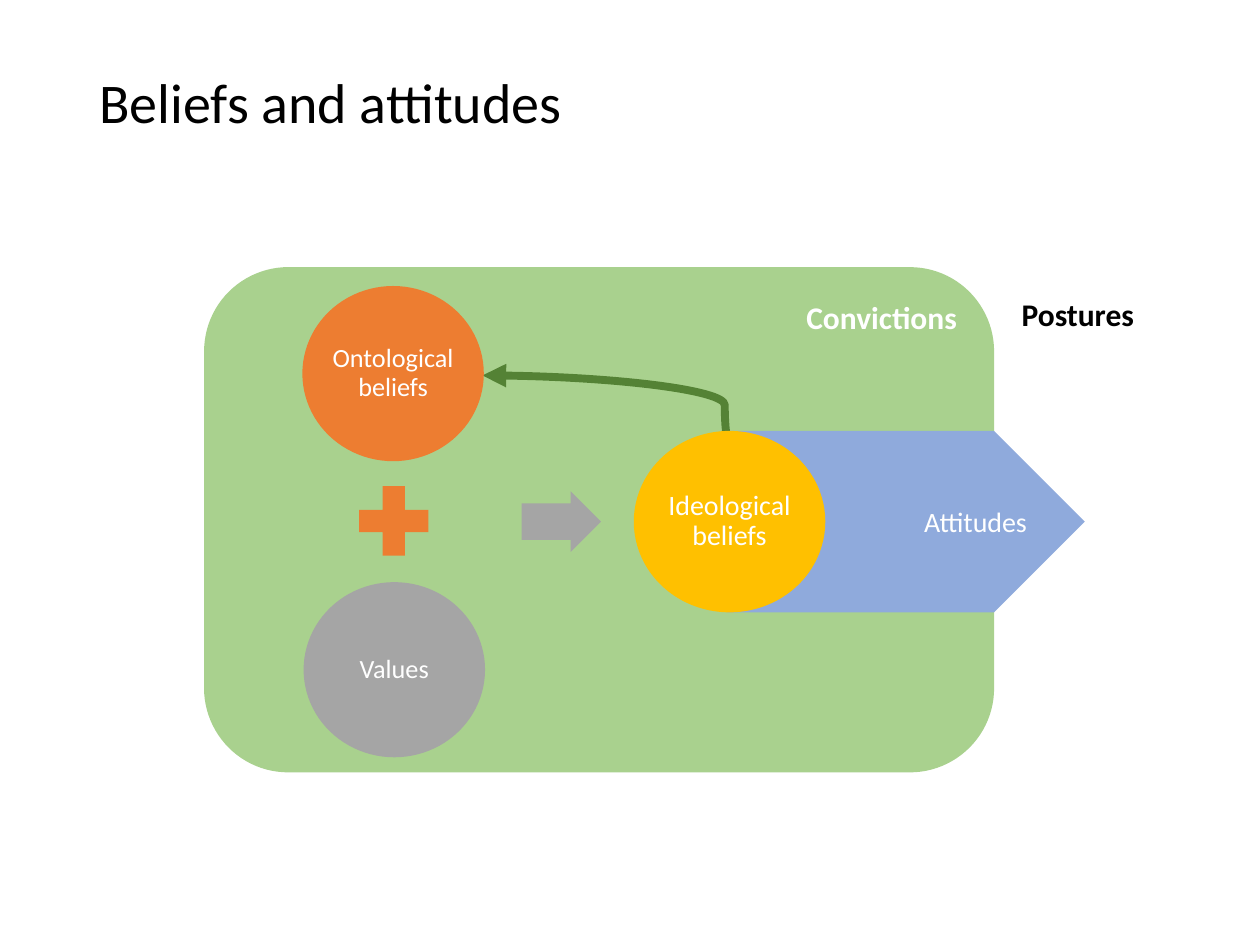
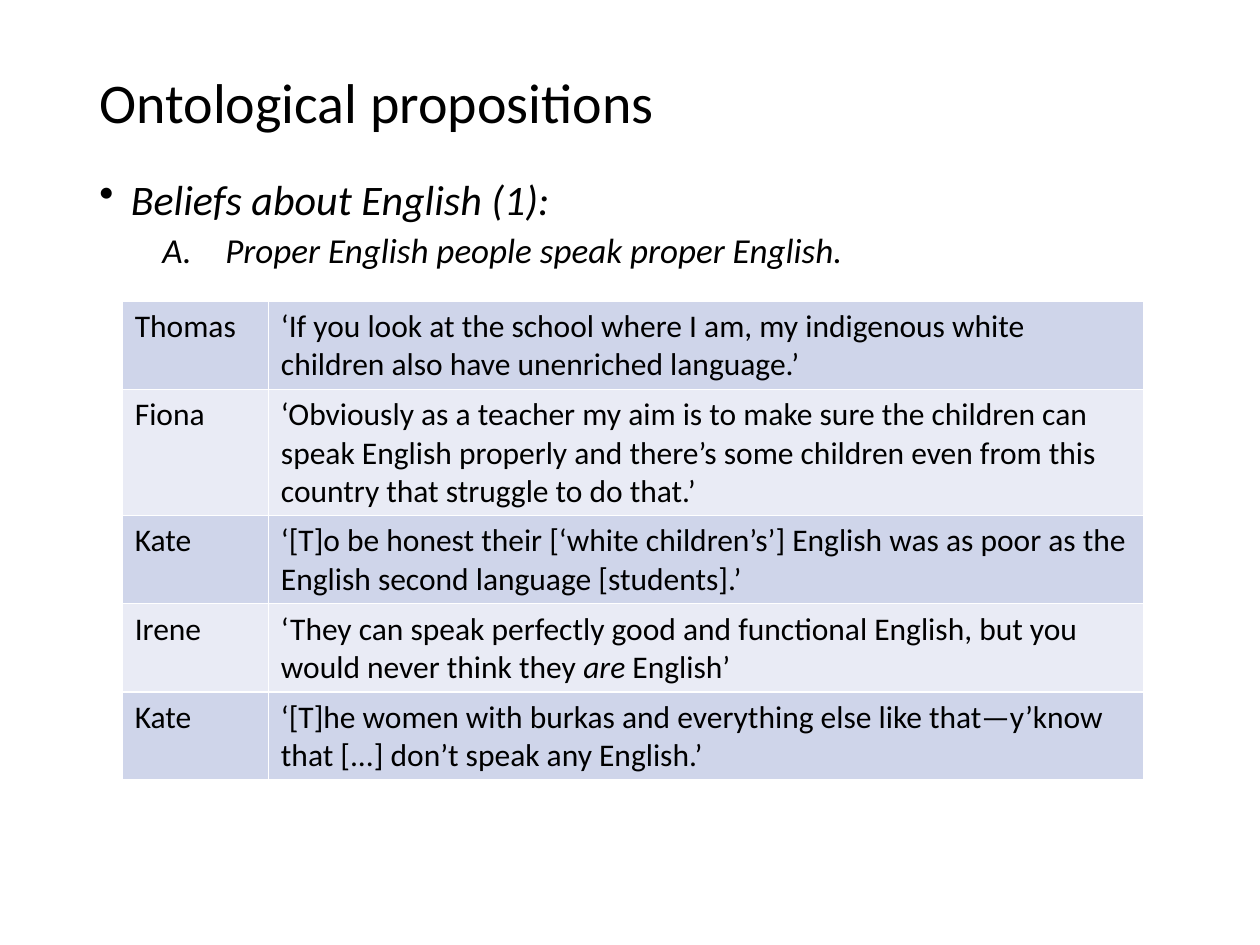
from dataclasses import dataclass

from lxml.etree import SubElement
from pptx import Presentation
from pptx.dml.color import RGBColor
from pptx.enum.shapes import MSO_CONNECTOR, MSO_SHAPE
from pptx.enum.text import MSO_ANCHOR, PP_ALIGN
from pptx.oxml.ns import qn
from pptx.util import Inches, Pt


@dataclass(frozen=True)
class Theme:
    font: str = "Calibri"
    black: str = "000000"
    white: str = "FFFFFF"
    green: str = "A9D18E"
    dark_green: str = "548235"
    blue: str = "8FAADC"
    orange: str = "ED7D31"
    grey: str = "A5A5A5"
    gold: str = "FFC000"
    bands: tuple = ("CFD5EA", "E9EBF5")
    title: int = 32
    body: int = 24
    sub_body: int = 20
    label: int = 18
    node: int = 16
    small_node: int = 15
    line_spacing: float = 0.9


THEME = Theme()
SLIDE_SIZE = (10, 7.5)
TITLE_AREA = (0.69, 0.4, 8.62, 0.87)

# Diagram: shape, area, fill, text and text format
CONVICTIONS = (MSO_SHAPE.ROUNDED_RECTANGLE, (1.62, 2.12, 6.27, 4.01), THEME.green, "Convictions",
               dict(size=THEME.label, bold=True, align=PP_ALIGN.RIGHT, anchor=MSO_ANCHOR.TOP))
ATTITUDES = (MSO_SHAPE.PENTAGON, (5.77, 3.42, 2.84, 1.44), THEME.blue, "Attitudes",
             dict(size=THEME.node, align=PP_ALIGN.RIGHT))
SMALL_NODE = dict(size=THEME.small_node, align=PP_ALIGN.CENTER, inset=0.02,
                  spacing=THEME.line_spacing)
NODES = [
    (MSO_SHAPE.OVAL, (2.4, 2.27, 1.44, 1.39), THEME.orange, "Ontological beliefs", SMALL_NODE),
    (MSO_SHAPE.MATH_PLUS, (2.75, 3.76, 0.75, 0.75), THEME.orange, "", {}),
    (MSO_SHAPE.OVAL, (2.41, 4.62, 1.44, 1.39), THEME.grey, "Values", SMALL_NODE),
    (MSO_SHAPE.RIGHT_ARROW, (4.14, 3.9, 0.63, 0.48), THEME.grey, "", {}),
    (MSO_SHAPE.OVAL, (5.03, 3.42, 1.52, 1.44), THEME.gold, "Ideological beliefs",
     {**SMALL_NODE, "size": THEME.node}),
]
FEEDBACK_CURVE = (3.83, 2.98, 5.77, 3.45)
POSTURES_AREA = (8.01, 2.29, 1.1, 0.4)

# Propositions: text, size, level, indents, space before and bullet
BODY_AREA = (0.69, 1.37, 8.62, 4.85)
PROPOSITIONS = [
    ("Beliefs about English (1):", THEME.body, 0, (0.25, -0.25), 0,
     ("a:buChar", "char", "•")),
    ("Proper English people speak proper English.", THEME.sub_body, 1, (1, -0.5), 5,
     ("a:buAutoNum", "type", "alphaUcPeriod")),
]
# Speaker, lines taken by the quote, spans of the quote (every second span is italic)
QUOTES = [
    ("Thomas", 2, ["‘If you look at the school where I am, my indigenous white children "
                   "also have unenriched language.’"]),
    ("Fiona", 3, ["‘Obviously as a teacher my aim is to make sure the children can speak "
                  "English properly and there’s some children even from this country that "
                  "struggle to do that.’"]),
    ("Kate", 2, ["‘[T]o be honest their [‘white children’s’] English was as poor as the "
                 "English second language [students].’"]),
    ("Irene", 2, ["‘They can speak perfectly good and functional English, but you would "
                  "never think they ", "are ", "English’"]),
    ("Kate", 2, ["‘[T]he women with burkas and everything else like that—y’know that [...] "
                 "don’t speak any English.’"]),
]
TABLE_ORIGIN = (0.97, 2.39)
COLUMN_WIDTHS = (1.16, 6.95)
LINE_HEIGHT, CELL_MARGINS = 0.3, 0.1


def inches(values):
    return [Inches(value) for value in values]


def set_font(font, size, color=THEME.black, **extra):
    for name, value in dict(name=THEME.font, size=Pt(size), **extra).items():
        setattr(font, name, value)
    font.color.rgb = RGBColor.from_string(color)


def write(holder, text, size, color, align=PP_ALIGN.LEFT, anchor=MSO_ANCHOR.MIDDLE,
          inset=None, spacing=None, wrap=True, **font_format):
    frame = holder.text_frame
    frame.word_wrap, frame.vertical_anchor = wrap, anchor
    if inset is not None:
        for side in ("left", "top", "right", "bottom"):
            setattr(frame, f"margin_{side}", Inches(inset))
    para = frame.paragraphs[0]
    para.alignment, para.line_spacing = align, spacing
    span = para.add_run()
    span.text = text
    set_font(span.font, size, color, **font_format)


def add_page(deck, title):
    page = deck.slides.add_slide(deck.slide_layouts[6])
    write(page.shapes.add_textbox(*inches(TITLE_AREA)), title, THEME.title, THEME.black,
          spacing=THEME.line_spacing)
    return page


def add_node(page, kind, area, fill, text, text_format):
    node = page.shapes.add_shape(kind, *inches(area))
    node.shadow.inherit = False
    node.fill.solid()
    node.fill.fore_color.rgb = RGBColor.from_string(fill)
    node.line.fill.background()
    if kind == MSO_SHAPE.RIGHT_ARROW:
        node.adjustments[0] = 0.6
    if text:
        write(node, text, color=THEME.white, **text_format)


def add_feedback_curve(page):
    curve = page.shapes.add_connector(MSO_CONNECTOR.CURVE, *inches(FEEDBACK_CURVE))
    curve.line.color.rgb = RGBColor.from_string(THEME.dark_green)
    curve.line.width = Pt(4.5)
    properties = curve._element.spPr
    SubElement(curve.line._get_or_add_ln(), qn("a:headEnd"), type="triangle")
    SubElement(properties, qn("a:effectLst"))
    guides = properties.find(qn("a:prstGeom")).find(qn("a:avLst"))
    SubElement(guides, qn("a:gd"), name="adj1", fmla="val 99100")


def add_propositions(page):
    box = page.shapes.add_textbox(*inches(BODY_AREA))
    frame = box.text_frame
    frame.word_wrap = True
    for index, (text, size, level, indents, before, bullet) in enumerate(PROPOSITIONS):
        para = frame.add_paragraph() if index else frame.paragraphs[0]
        para.level, para.line_spacing, para.space_before = level, THEME.line_spacing, Pt(before)
        properties = para._p.get_or_add_pPr()
        for name, value in zip(("marL", "indent"), indents):
            properties.set(name, str(Inches(value)))
        tag, key, value = bullet
        SubElement(properties, qn(tag), {key: value})
        span = para.add_run()
        span.text = text
        set_font(span.font, size, italic=True)


def fill_cell(cell, spans, band):
    properties = cell._tc.get_or_add_tcPr()
    for side in ("a:lnL", "a:lnR", "a:lnT", "a:lnB"):
        border = SubElement(properties, qn(side), w=str(Pt(1)))
        SubElement(SubElement(border, qn("a:solidFill")), qn("a:srgbClr"), val=THEME.white)
    cell.fill.solid()
    cell.fill.fore_color.rgb = RGBColor.from_string(band)
    for index, text in enumerate(spans):
        span = cell.text_frame.paragraphs[0].add_run()
        span.text = text
        set_font(span.font, THEME.label, italic=index % 2 == 1)


def add_quotes(page):
    heights = [CELL_MARGINS + LINE_HEIGHT * lines for _, lines, _ in QUOTES]
    size = (sum(COLUMN_WIDTHS), sum(heights))
    table = page.shapes.add_table(len(QUOTES), len(COLUMN_WIDTHS),
                                  *inches(TABLE_ORIGIN + size)).table
    table.first_row = table.horz_banding = False
    for column, width in zip(table.columns, COLUMN_WIDTHS):
        column.width = Inches(width)
    for index, (speaker, _, quote) in enumerate(QUOTES):
        table.rows[index].height = Inches(heights[index])
        for column, spans in enumerate(([speaker], quote)):
            fill_cell(table.cell(index, column), spans, THEME.bands[index % 2])


def main():
    deck = Presentation()
    deck.slide_width, deck.slide_height = inches(SLIDE_SIZE)

    diagram = add_page(deck, "Beliefs and attitudes")
    for node in (CONVICTIONS, ATTITUDES):
        add_node(diagram, *node)
    add_feedback_curve(diagram)
    for node in NODES:
        add_node(diagram, *node)
    write(diagram.shapes.add_textbox(*inches(POSTURES_AREA)), "Postures", THEME.label,
          THEME.black, anchor=MSO_ANCHOR.TOP, wrap=False, bold=True)

    propositions = add_page(deck, "Ontological propositions")
    add_propositions(propositions)
    add_quotes(propositions)

    deck.save("out.pptx")


if __name__ == "__main__":
    main()
